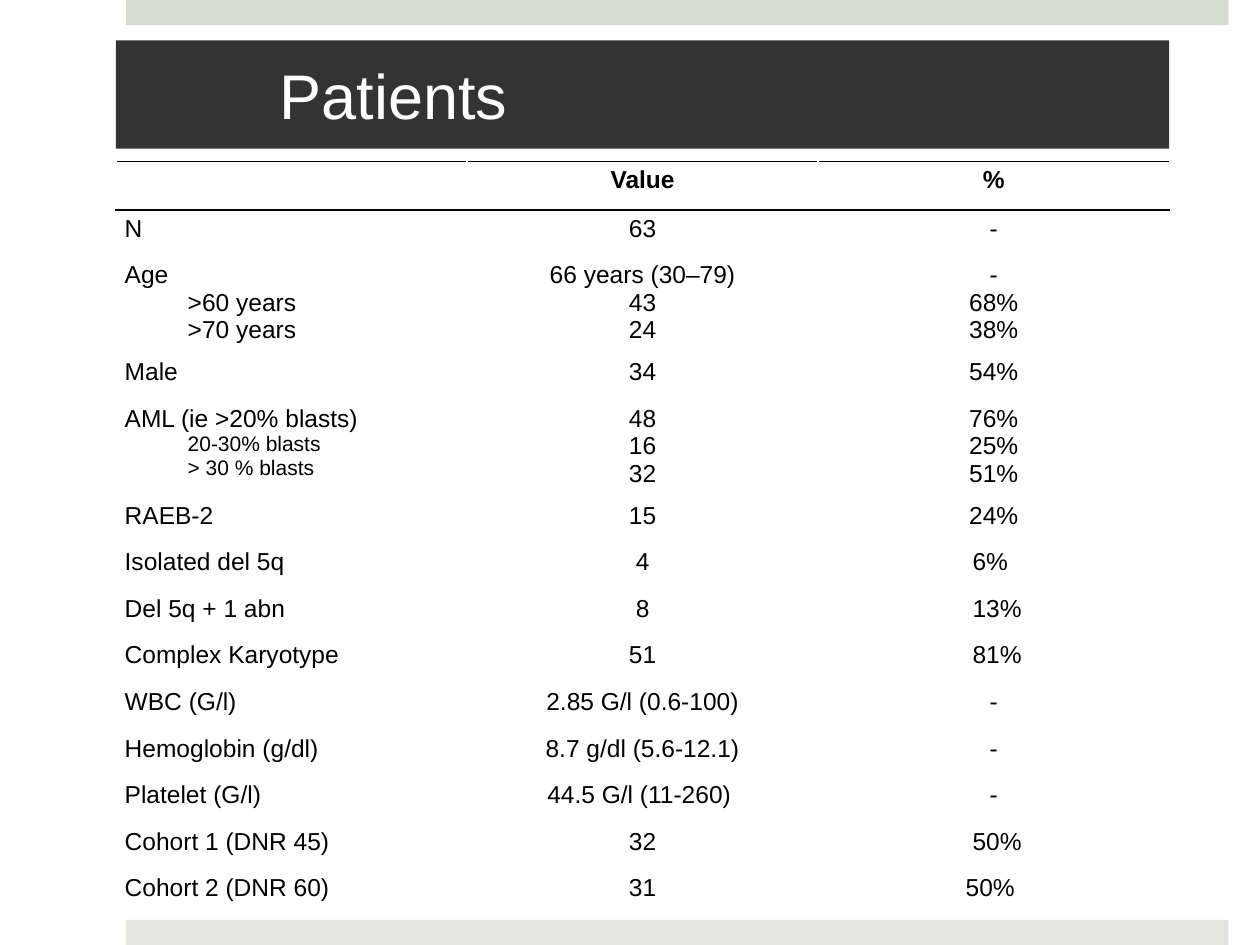
"""Build the patient characteristics slide."""
from dataclasses import dataclass

from lxml.etree import SubElement
from pptx import Presentation
from pptx.dml.color import RGBColor
from pptx.enum.shapes import MSO_SHAPE
from pptx.enum.text import MSO_ANCHOR, MSO_AUTO_SIZE, PP_ALIGN
from pptx.oxml.ns import qn
from pptx.util import Inches, Pt

FONT = "Arial"
TABLE_LEFT, TABLE_WIDTH = 0.92, 8.36
LINE_ROW, GROUP_ROW = 0.37, 0.77


@dataclass
class Characteristic:
    label: str
    value: str
    percent: str
    detail_size: float = 14


@dataclass
class Bar:
    top: float
    color: str


BARS = [Bar(0, "D6D9CD"), Bar(7.3, "E4E6DE")]

CHARACTERISTICS = [
    Characteristic("", "Value", "%"),
    Characteristic("N", "63", "-"),
    Characteristic("Age\n\t>60 years\n\t>70 years", "66 years (30–79)\n43\n24", "-\n68%\n38%"),
    Characteristic("Male", "34", "54%"),
    Characteristic("AML (ie >20% blasts)\n\t20-30% blasts\n\t> 30 % blasts",
                   "48\n16\n32", "76%\n25%\n51%", detail_size=12),
    Characteristic("RAEB-2", "15", "24%"),
    Characteristic("Isolated del 5q", "4", "6% "),
    Characteristic("Del 5q + 1 abn", "8", " 13%"),
    Characteristic("Complex Karyotype", "51", " 81%"),
    Characteristic("WBC (G/l)", "2.85 G/l (0.6-100)", "-"),
    Characteristic("Hemoglobin (g/dl)", "8.7 g/dl (5.6-12.1)", "-"),
    Characteristic("Platelet (G/l)", "44.5 G/l (11-260) ", "-"),
    Characteristic("Cohort 1 (DNR 45)", "32", " 50%"),
    Characteristic("Cohort 2 (DNR 60)", "31", "50% "),
]


def rgb(color: str) -> RGBColor:
    return RGBColor.from_string(color)


def add_run(paragraph, text: str, size: float, color: str = "000000", bold: bool = False) -> None:
    run = paragraph.add_run()
    run.text = text
    run.font.name = FONT
    run.font.size = Pt(size)
    run.font.bold = bold
    run.font.color.rgb = rgb(color)


def add_bar(slide, bar: Bar) -> None:
    strip = slide.shapes.add_shape(MSO_SHAPE.RECTANGLE, Inches(1), Inches(bar.top),
                                   Inches(8.75), Inches(0.2))
    strip.shadow.inherit = False
    strip.fill.solid()
    strip.fill.fore_color.rgb = rgb(bar.color)
    strip.line.fill.background()


def add_title(slide, text: str) -> None:
    title = slide.shapes.title
    title.left, title.top = Inches(TABLE_LEFT), Inches(0.32)
    title.width, title.height = Inches(TABLE_WIDTH), Inches(0.86)
    title.fill.solid()
    title.fill.fore_color.rgb = rgb("333333")
    frame = title.text_frame
    frame.auto_size = MSO_AUTO_SIZE.NONE
    frame.vertical_anchor = MSO_ANCHOR.MIDDLE
    frame.margin_left, frame.margin_right = Inches(1.3), Inches(0.3)
    frame.margin_top = frame.margin_bottom = Inches(0.05)
    heading = frame.paragraphs[0]
    heading.alignment = PP_ALIGN.LEFT
    add_run(heading, text, 36, "FFFFFF")


def add_border(cell, side: str, color: str, width: float) -> None:
    border = SubElement(cell._tc.get_or_add_tcPr(), qn(f"a:ln{side}"), w=str(Pt(width)))
    SubElement(SubElement(border, qn("a:solidFill")), qn("a:srgbClr"), val=color)


def fill_cell(cell, text: str, align: PP_ALIGN, bold: bool, detail_size: float = 14) -> None:
    cell.margin_left = cell.margin_right = Inches(0.07)
    cell.margin_top = cell.margin_bottom = Inches(0.04)
    cell.fill.background()
    for index, line in enumerate(text.split("\n") if text else []):
        frame = cell.text_frame
        paragraph = frame.add_paragraph() if index else frame.paragraphs[0]
        paragraph.alignment = align
        add_run(paragraph, line, detail_size if index else 14, bold=bold)


def add_patient_table(slide, characteristics: list[Characteristic]) -> None:
    heights = [GROUP_ROW if "\n" in item.label else LINE_ROW for item in characteristics]
    table = slide.shapes.add_table(len(characteristics), 3, Inches(TABLE_LEFT), Inches(1.28),
                                   Inches(TABLE_WIDTH), Inches(sum(heights))).table
    table.first_row = table.horz_banding = False
    last = len(characteristics) - 1
    for index, (item, height) in enumerate(zip(characteristics, heights)):
        row = table.rows[index]
        row.height = Inches(height)
        for cell in row.cells:
            if index <= 1:
                add_border(cell, "T", "000000", 1)
            if index == 0:
                add_border(cell, "B", "000000", 1)
            if index == last:
                add_border(cell, "B", "FFFFFF", 1.5)
        label, value, percent = row.cells
        bold = index == 0
        fill_cell(label, item.label, PP_ALIGN.LEFT, bold, item.detail_size)
        fill_cell(value, item.value, PP_ALIGN.CENTER, bold)
        fill_cell(percent, item.percent, PP_ALIGN.CENTER, bold)


def main() -> None:
    presentation = Presentation()
    presentation.slide_width, presentation.slide_height = Inches(10), Inches(7.5)
    slide = presentation.slides.add_slide(presentation.slide_layouts[5])
    for bar in BARS:
        add_bar(slide, bar)
    add_title(slide, "Patients")
    add_patient_table(slide, CHARACTERISTICS)
    presentation.save("out.pptx")


if __name__ == "__main__":
    main()
